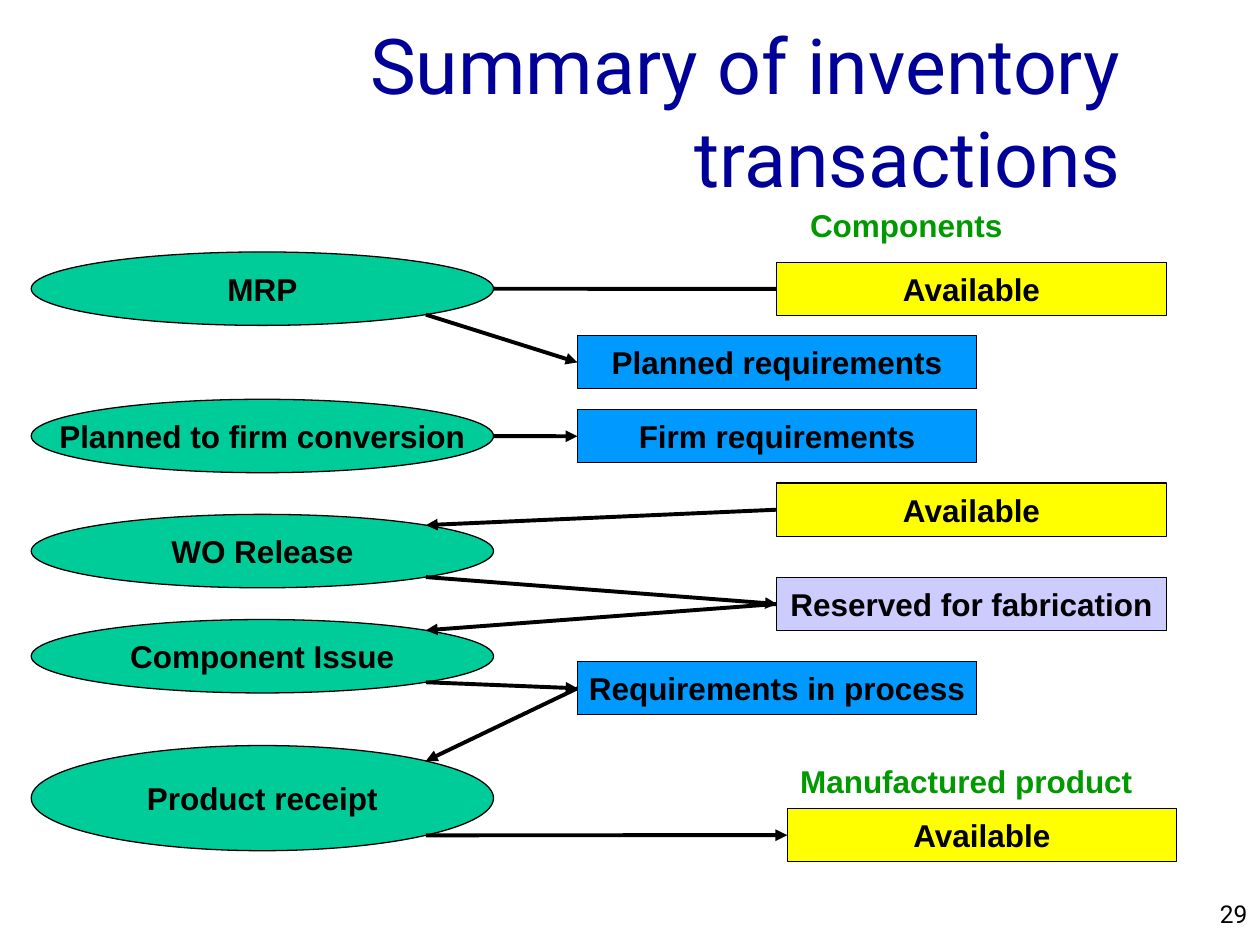
from math import sqrt
from typing import NamedTuple

from lxml import etree
from pptx import Presentation
from pptx.dml.color import RGBColor
from pptx.enum.shapes import MSO_CONNECTOR, MSO_SHAPE
from pptx.enum.text import MSO_ANCHOR, MSO_AUTO_SIZE, PP_ALIGN
from pptx.oxml.ns import qn
from pptx.util import Cm, Pt

RECT, OVAL = MSO_SHAPE.RECTANGLE, MSO_SHAPE.OVAL
LINE = MSO_CONNECTOR.STRAIGHT
TOP, MID = MSO_ANCHOR.TOP, MSO_ANCHOR.MIDDLE
LEFT, CENTER, RIGHT = PP_ALIGN.LEFT, PP_ALIGN.CENTER, PP_ALIGN.RIGHT
GROW = MSO_AUTO_SIZE.SHAPE_TO_FIT_TEXT

BLACK, NAVY, GREEN = "000000", "000099", "009900"
TEAL, YELLOW, BLUE, LILAC = "00CC99", "FFFF00", "0099FF", "CCCCFF"
BOLD = {"name": "Arial", "size": Pt(18), "bold": True}
HEAD = {"name": "Roboto", "size": Pt(44)}
FOOT = {"name": "Roboto", "size": Pt(14)}

STEP_X, STEP_W, STEP_H = 0.63, 9.32, 1.48
BOX_H = 1.07
NEAR, FAR, LAST = 11.64, 15.66, 15.87
NEAR_W, FAR_W = 8.05, 7.85
LOW_SITE = sqrt(0.5)


class Step(NamedTuple):
    text: str
    top: float
    high: float = STEP_H


class Box(NamedTuple):
    text: str
    left: float
    top: float
    wide: float
    fill: str


class Link(NamedTuple):
    """side is -1, 0 or 1: upper right, right or lower right of the step."""
    step: int
    side: int
    box: int
    back: bool = False
    arrow: bool = True


class Label(NamedTuple):
    text: str
    area: tuple[float, float, float, float]
    font: dict
    color: str
    align: PP_ALIGN = LEFT
    anchor: MSO_ANCHOR = TOP
    wrap: bool = False


STEPS = [
    Step("MRP", 5.08),
    Step("Planned to firm conversion", 8.05),
    Step("WO Release", 10.37),
    Step("Component Issue", 12.49),
    Step("Product receipt", 15.03, 2.12),
]
BOXES = [
    Box("Available", FAR, 5.29, FAR_W, YELLOW),
    Box("Planned requirements", NEAR, 6.77, NEAR_W, BLUE),
    Box("Firm requirements", NEAR, 8.26, NEAR_W, BLUE),
    Box("Available", FAR, 9.74, FAR_W, YELLOW),
    Box("Reserved for fabrication", FAR, 11.64, FAR_W, LILAC),
    Box("Requirements in process", NEAR, 13.34, NEAR_W, BLUE),
    Box("Available", LAST, 16.3, FAR_W, YELLOW),
]
LINKS = [
    Link(0, 0, 0, back=True, arrow=False),
    Link(0, 1, 1),
    Link(1, 0, 2),
    Link(2, -1, 3, back=True),
    Link(2, 1, 4),
    Link(3, -1, 4, back=True),
    Link(3, 1, 5),
    Link(4, -1, 5, back=True),
    Link(4, 1, 6),
]
LABELS = [
    Label("Summary of inventory transactions", (0.42, 0.63, 22.43, 3.18),
          HEAD, NAVY, RIGHT, MID, True),
    Label("Components", (16.08, 4.02, 4.4, 1.02), BOLD, GREEN),
    Label("Manufactured product", (15.88, 15.24, 7.25, 1.02), BOLD, GREEN),
    Label("29", (20.11, 17.99, 5.29, 0.64), FOOT, BLACK, RIGHT, TOP, True),
]


def paint(target, color: str) -> None:
    target.rgb = RGBColor.from_string(color)


def write(shape, text: str, font: dict, color: str, align: PP_ALIGN,
          anchor: MSO_ANCHOR, wrap: bool) -> None:
    frame = shape.text_frame
    frame.word_wrap, frame.vertical_anchor = wrap, anchor
    para = frame.paragraphs[0]
    para.alignment = align
    run = para.add_run()
    run.text = text
    for name, value in font.items():
        setattr(run.font, name, value)
    paint(run.font.color, color)


def node(slide, kind: MSO_SHAPE, area: tuple, fill: str, text: str):
    """Add a filled, outlined shape with bold centred text."""
    shape = slide.shapes.add_shape(kind, *map(Cm, area))
    shape.shadow.inherit = False
    shape.fill.solid()
    paint(shape.fill.fore_color, fill)
    paint(shape.line.color, BLACK)
    shape.line.width = Pt(0.75)
    write(shape, text, BOLD, BLACK, CENTER, MID, False)
    return shape


def join(slide, link: Link, box) -> None:
    """Draw a line between a step's edge and the left side of a box."""
    step = STEPS[link.step]
    reach = LOW_SITE if link.side else 1
    x = Cm(STEP_X + STEP_W / 2 * (1 + reach))
    y = Cm(step.top + step.high / 2 * (1 + link.side * LOW_SITE))
    line = slide.shapes.add_connector(LINE, x, y, x, y)
    if link.back:
        line.begin_connect(box, 1)
    else:
        line.end_connect(box, 1)
    paint(line.line.color, BLACK)
    line.line.width = Pt(2.25)
    if link.arrow:
        etree.SubElement(line.line._get_or_add_ln(), qn("a:tailEnd"),
                         type="triangle")
    etree.SubElement(line._element.spPr, qn("a:effectLst"))


def main() -> None:
    deck = Presentation()
    deck.slide_width, deck.slide_height = Cm(25.4), Cm(19.05)
    slide = deck.slides.add_slide(deck.slide_layouts[6])
    for label in LABELS:
        shape = slide.shapes.add_textbox(*map(Cm, label.area))
        write(shape, label.text, label.font, label.color, label.align,
              label.anchor, label.wrap)
        if not label.wrap:
            shape.text_frame.auto_size = GROW
    for step in STEPS:
        node(slide, OVAL, (STEP_X, step.top, STEP_W, step.high),
             TEAL, step.text)
    boxes = [node(slide, RECT, (box.left, box.top, box.wide, BOX_H),
                  box.fill, box.text) for box in BOXES]
    for link in LINKS:
        join(slide, link, boxes[link.box])
    deck.save("out.pptx")


if __name__ == "__main__":
    main()
